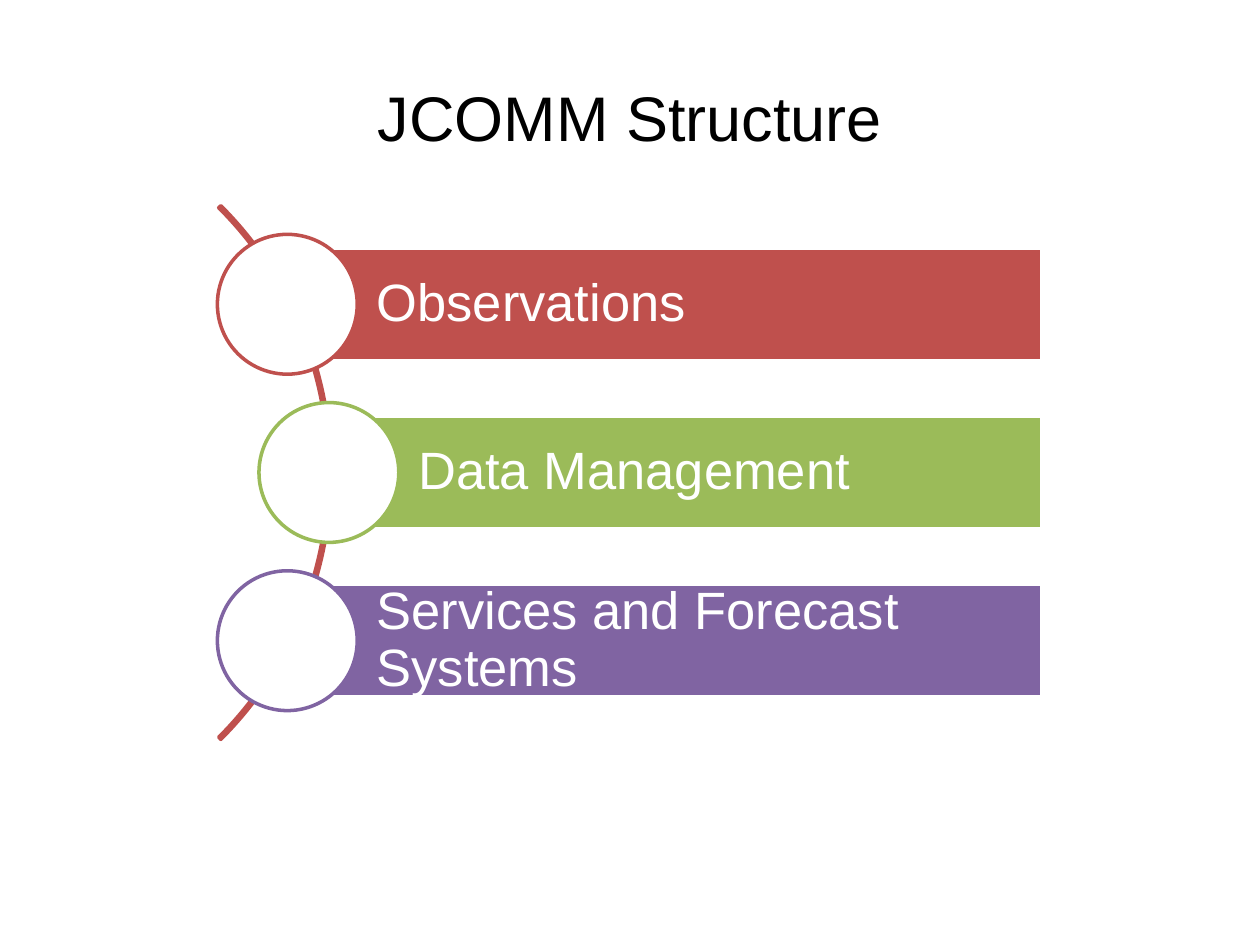
import pptx
import pptx.util
import pptx.dml.color
import pptx.enum.shapes
import pptx.enum.text

HUES = {"ink": "000000", "paper": "FFFFFF", "red": "BF504D",
        "green": "9BBB59", "violet": "8064A2"}
KINDS = pptx.enum.shapes.MSO_SHAPE
ALIGN = pptx.enum.text.PP_ALIGN
MIDDLE = pptx.enum.text.MSO_ANCHOR.MIDDLE


class Deck:
    """Style and current slide; lengths are cells of a 100 by 75 grid."""
    font = "Arial"
    cols, rows = 100, 75

    def __init__(self):
        self.show = pptx.Presentation()
        self.show.slide_width = pptx.util.Inches(10)
        self.show.slide_height = pptx.util.Inches(7.5)
        self.slide = self.show.slides.add_slide(self.show.slide_layouts[5])

    def hue(self, name):
        return pptx.dml.color.RGBColor.from_string(HUES[name])

    def box(self, left, top, wide, high):
        col = self.show.slide_width / self.cols
        row = self.show.slide_height / self.rows
        return [round(n) for n in (left * col, top * row, wide * col, high * row)]

    def label(self, frame, text, size, color, align):
        frame.word_wrap = True
        frame.vertical_anchor = MIDDLE
        para = frame.paragraphs[0]
        para.alignment = align
        run = para.add_run()
        run.text = text
        run.font.name = self.font
        run.font.size = pptx.util.Pt(size)
        run.font.color.rgb = self.hue(color)
        return para

    def title(self, text, *area):
        shape = self.slide.shapes.title
        shape.left, shape.top, shape.width, shape.height = self.box(*area)
        self.label(shape.text_frame, text, 36, "ink", ALIGN.CENTER)

    def shape(self, kind, area, fill, line):
        shape = self.slide.shapes.add_shape(kind, *self.box(*area))
        shape.shadow.inherit = False
        if fill:
            shape.fill.solid()
            shape.fill.fore_color.rgb = self.hue(fill)
        else:
            shape.fill.background()
        shape.line.color.rgb = self.hue(line)
        shape.line.width = pptx.util.Pt(2)
        return shape

    def arc(self, mid_x, mid_y, size, color):
        area = (mid_x - size / 2, mid_y - size / 2, size, size)
        shape = self.shape(KINDS.BLOCK_ARC, area, None, color)
        for i, value in enumerate((189, 27, 0.004)):  # angles, then thickness
            shape.adjustments[i] = value

    def bar(self, text, left, right, mid, high, color):
        area = (left, mid - high / 2, right - left, high)
        frame = self.shape(KINDS.RECTANGLE, area, color, "paper").text_frame
        frame.margin_left = pptx.util.Inches(0.71)
        frame.margin_right = frame.margin_top = frame.margin_bottom = pptx.util.Inches(0.08)
        para = self.label(frame, text, 30, "paper", ALIGN.LEFT)
        para.line_spacing = 0.9

    def disc(self, mid_x, mid_y, size, color):
        area = (mid_x - size / 2, mid_y - size / 2, size, size)
        self.shape(KINDS.OVAL, area, "paper", color)


def main():
    deck = Deck()
    deck.title("JCOMM Structure", 5, 3, 90, 12.5)

    # Curve that carries the discs
    mid, step = 37.5, 13.35
    deck.arc(-3.65, mid, 59.9, "red")

    # Bars start at the middle of their discs and share a right edge
    items = [("Observations", 22.8, "red"),
             ("Data Management", 26.1, "green"),
             ("Services and Forecast Systems", 22.8, "violet")]
    for i, (text, left, color) in enumerate(items):
        row = mid + (i - 1) * step
        deck.bar(text, left, 82.7, row, 8.9, color)
        deck.disc(left, row, 11.1, color)

    deck.show.save("out.pptx")


if __name__ == "__main__":
    main()
